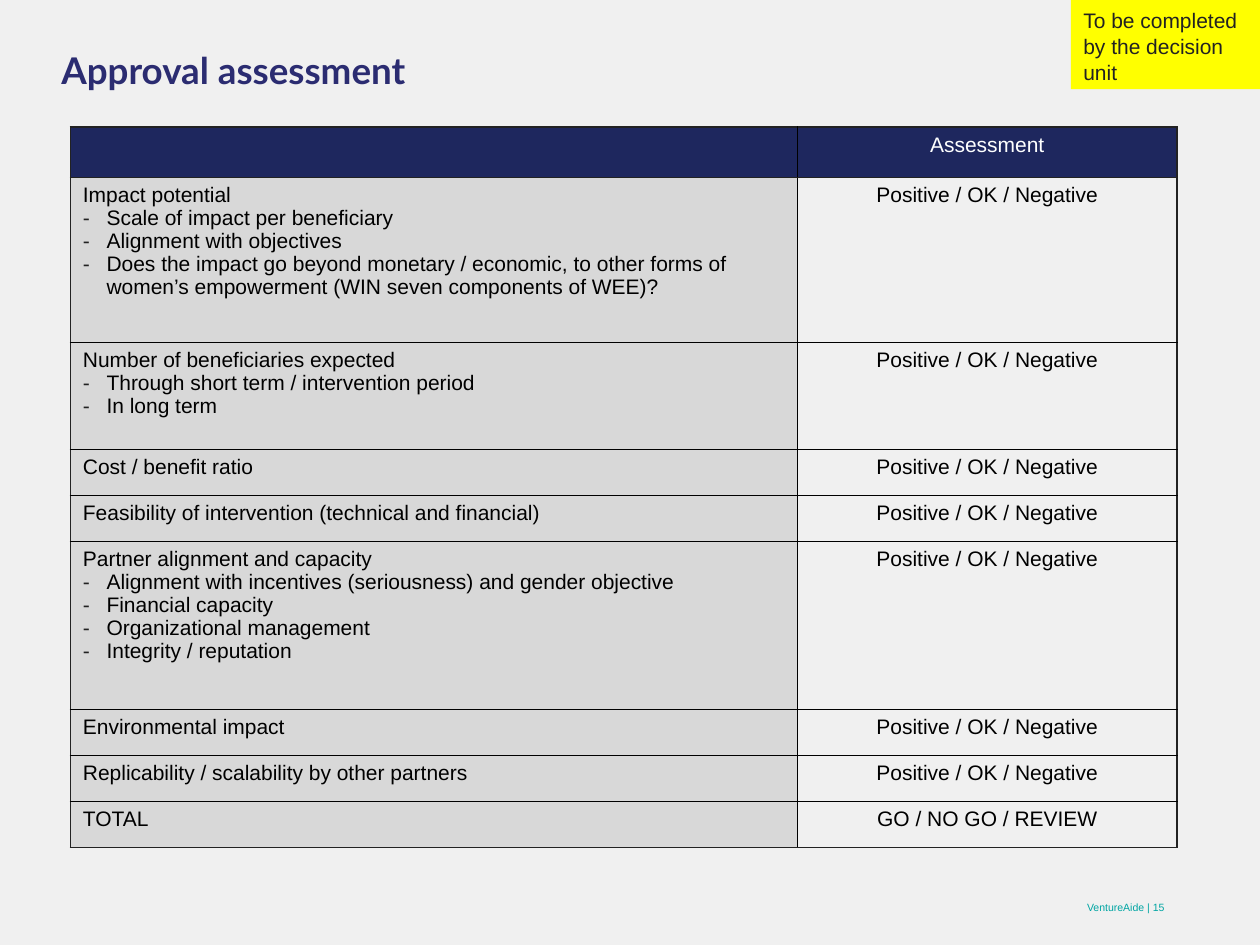
from dataclasses import dataclass

import pptx
import pptx.dml.color
import pptx.enum.shapes
import pptx.enum.text
import pptx.oxml.ns
import pptx.util
from lxml import etree

Pt = pptx.util.Pt
Align = pptx.enum.text.PP_ALIGN
Anchor = pptx.enum.text.MSO_ANCHOR
qn = pptx.oxml.ns.qn


@dataclass(frozen=True)
class Theme:
    background: str = "F0F0F0"
    title: str = "2B2C71"
    footer: str = "00A5A3"
    note: str = "FFFF00"
    ink: str = "222222"
    black: str = "000000"
    header: str = "1E275E"
    header_text: str = "FEFFFF"
    criterion: str = "D8D8D8"
    heading_font: str = "Lato"
    body_font: str = "Arial"
    title_size: float = 21
    body_size: float = 12
    footer_size: float = 6
    outer_line: float = 1
    inner_line: float = 0.75


THEME = Theme()
RATING = "Positive / OK / Negative"

# Each row: height, criterion, its points, assessment
ROWS = [
    (94.3, "Impact potential",
     ["Scale of impact per beneficiary", "Alignment with objectives",
      "Does the impact go beyond monetary / economic, to other forms of "
      "women’s empowerment (WIN seven components of WEE)?"], RATING),
    (61.1, "Number of beneficiaries expected",
     ["Through short term / intervention period", "In long term"], RATING),
    (26.3, "Cost / benefit ratio", [], RATING),
    (26.3, "Feasibility of intervention (technical and financial)", [], RATING),
    (96, "Partner alignment and capacity",
     ["Alignment with incentives (seriousness) and gender objective",
      "Financial capacity", "Organizational management",
      "Integrity / reputation"], RATING),
    (26.3, "Environmental impact", [], RATING),
    (26.3, "Replicability / scalability by other partners", [], RATING),
    (26.3, "TOTAL", [], "GO / NO GO / REVIEW"),
]
HEADER_HEIGHT = 26.3


def rgb(value):
    return pptx.dml.color.RGBColor.from_string(value)


def write(para, text, *, size=THEME.body_size, font=THEME.body_font,
          color=THEME.black, bold=False, align=Align.LEFT, spacing=None):
    para.alignment = align
    para.line_spacing = spacing
    span = para.add_run()
    span.text = text
    span.font.size = Pt(size)
    span.font.name = font
    span.font.bold = bold
    span.font.color.rgb = rgb(color)


def add_dash(para):
    props = para._p.get_or_add_pPr()
    props.set("marL", str(Pt(13.5)))
    props.set("indent", str(-Pt(13.5)))
    tint = etree.SubElement(props, qn("a:buClr"))
    etree.SubElement(tint, qn("a:srgbClr"), val=THEME.ink)
    etree.SubElement(props, qn("a:buFont"), typeface=THEME.body_font)
    etree.SubElement(props, qn("a:buChar"), char="-")


def add_border(cell, side, color, width):
    props = cell._tc.get_or_add_tcPr()
    line = etree.SubElement(props, qn(f"a:ln{side}"), w=str(Pt(width)))
    fill = etree.SubElement(line, qn("a:solidFill"))
    etree.SubElement(fill, qn("a:srgbClr"), val=color)


def add_text(page, box, text, anchor=Anchor.TOP, **style):
    frame = page.shapes.add_textbox(*map(Pt, box)).text_frame
    frame.word_wrap = True
    frame.vertical_anchor = anchor
    write(frame.paragraphs[0], text, **style)


def add_note(page, box):
    note = page.shapes.add_shape(
        pptx.enum.shapes.MSO_SHAPE.RECTANGLE, *map(Pt, box))
    note.shadow.inherit = False
    note.fill.solid()
    note.fill.fore_color.rgb = rgb(THEME.note)
    note.line.fill.background()
    frame = note.text_frame
    frame.word_wrap = True
    frame.vertical_anchor = Anchor.TOP
    write(frame.paragraphs[0], "To be completed by the decision unit",
          color=THEME.ink, spacing=1.04)


def style_cell(cell, row, column, last_row, fill):
    outer = {"L": column == 0, "R": column == 1,
             "T": row <= 1, "B": row in (0, last_row)}
    for side, is_outer in outer.items():
        if is_outer:
            add_border(cell, side, THEME.ink, THEME.outer_line)
        else:
            add_border(cell, side, THEME.black, THEME.inner_line)
    if fill:
        cell.fill.solid()
        cell.fill.fore_color.rgb = rgb(fill)
    else:
        cell.fill.background()


def add_assessment_table(page, box):
    left, top, width, height = box
    frame = page.shapes.add_table(len(ROWS) + 1, 2, *map(Pt, box))
    table = frame.table
    table.horz_banding = False
    criterion_width = 415.6
    table.columns[0].width = Pt(criterion_width)
    table.columns[1].width = Pt(width - criterion_width)

    # Header row
    table.rows[0].height = Pt(HEADER_HEIGHT)
    for column in range(2):
        style_cell(table.cell(0, column), 0, column, len(ROWS), THEME.header)
    write(table.cell(0, 1).text_frame.paragraphs[0], "Assessment",
          color=THEME.header_text, align=Align.CENTER)

    # Criteria rows
    for row, (row_height, criterion, points, rating) in enumerate(ROWS, 1):
        table.rows[row].height = Pt(row_height)
        first, second = table.cell(row, 0), table.cell(row, 1)
        style_cell(first, row, 0, len(ROWS), THEME.criterion)
        style_cell(second, row, 1, len(ROWS), None)
        write(first.text_frame.paragraphs[0], criterion, spacing=0.98)
        for point in points:
            para = first.text_frame.add_paragraph()
            write(para, point, spacing=0.98)
            add_dash(para)
        write(second.text_frame.paragraphs[0], rating, align=Align.CENTER,
              spacing=0.98)


def build_assessment_page(deck):
    page = deck.slides.add_slide(deck.slide_layouts[6])
    page.background.fill.solid()
    page.background.fill.fore_color.rgb = rgb(THEME.background)
    add_text(page, (28, 23.8, 638.6, 41.8), "Approval assessment",
             size=THEME.title_size, font=THEME.heading_font,
             color=THEME.title, bold=True)
    add_text(page, (504.7, 504, 167.8, 28.8), "VentureAide | 15",
             anchor=Anchor.MIDDLE, size=THEME.footer_size,
             color=THEME.footer, align=Align.RIGHT)
    add_note(page, (612, 0, 108, 51))
    table_height = HEADER_HEIGHT + sum(row[0] for row in ROWS)
    add_assessment_table(page, (40.2, 72.6, 632.4, table_height))


def main():
    deck = pptx.Presentation()
    deck.slide_width, deck.slide_height = Pt(720), Pt(540)
    build_assessment_page(deck)
    deck.save("out.pptx")


if __name__ == "__main__":
    main()
